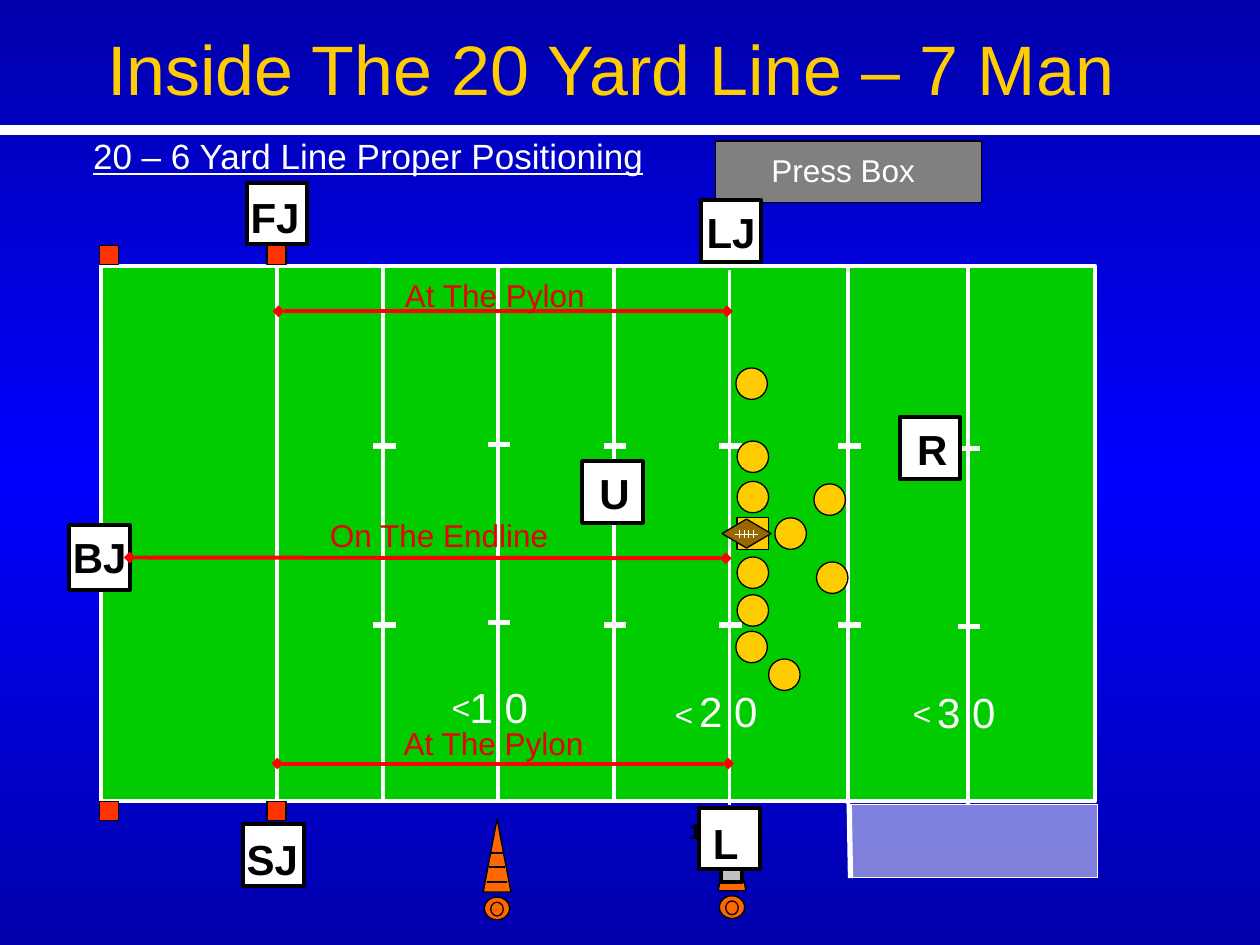
"""Builds the seven-man football officiating slide for plays inside the 20 yard line."""
import copy

import pptx
import pptx.dml.color
import pptx.enum.dml
import pptx.enum.shapes
import pptx.enum.text
import pptx.oxml
import pptx.oxml.ns
import pptx.util

Inches = pptx.util.Inches
SHAPE = pptx.enum.shapes.MSO_SHAPE
ALIGN = pptx.enum.text.PP_ALIGN
ANCHOR = pptx.enum.text.MSO_ANCHOR

THEME = {
    "font": "Arial",
    "title": 40, "subtitle": 20, "big": 24, "label": 18, "small": 12,
    "edge": "0000AA", "middle": "0000FF", "white": "FFFFFF", "black": "000000",
    "grass": "00CC00", "gold": "FFCC00", "grey": "808080", "silver": "C0C0C0",
    "pylon": "FF3300", "cone": "FF6600", "leather": "996600",
    "arrow": "FF0000", "note": "EA0000",
}

TITLE = "Inside The 20 Yard Line – 7 Man"
SUBTITLE = "20 – 6 Yard Line Proper Positioning"
FIELD = (0.8, 2.11, 7.89, 4.25)
GOAL_X = 2.2
PYLON = 0.15
PYLON_XS, PYLON_YS = (0.79, 2.12), (1.95, 6.36)
YARD_LINES = [
    (3.04, 2.11, (3.54, 4.96)), (3.95, 2.11, (3.53, 4.94)), (4.87, 2.11, (3.54, 4.96)),
    (5.79, 2.14, (3.54, 4.96)), (6.73, 2.13, (3.54, 4.96)), (7.68, 2.13, (3.56, 4.97)),
]
NUMERALS = [("1 0", 3.53, 5.36, 3.48, 5.41), ("2 0", 5.35, 5.39, 5.25, 5.47),
            ("3 0", 7.24, 5.4, 7.14, 5.46)]
CONES = [(5.81, 6.49, (6.99,)), (3.945, 6.5, (6.77, 6.88, 7))]
OFFICIALS = [
    ("FJ", 1.96, 1.45, 0.49, 1.89, 1.44), ("U", 4.62, 3.66, 0.49, 4.66, 3.63),
    ("SJ", 1.93, 6.54, 0.49, 1.86, 6.54), ("R", 7.14, 3.31, 0.49, 7.18, 3.28),
    ("L", 5.55, 6.41, 0.49, 5.56, 6.41), ("LJ", 5.56, 1.59, 0.49, 5.51, 1.56),
    ("BJ", 0.55, 4.17, 0.51, 0.48, 4.14),
]
PLAYER = 0.25
PLAYERS = [(5.85, 3.82), (5.85, 3.5), (5.85, 4.42), (5.85, 4.72), (6.15, 4.11), (6.1, 5.23),
           (5.84, 5.01), (5.84, 2.92), (6.46, 3.84), (6.48, 4.46)]
DISTANCES = [
    ("On The Endline", (2.51, 4.05, 1.94), (1.05, 5.76, 4.43), "BJ"),
    ("At The Pylon", (3.11, 2.14, 1.63), (2.21, 5.77, 2.47), None),
    ("At The Pylon", (3.1, 5.7, 1.63), (2.2, 5.78, 6.06), None),
]


def rgb(name):
    return pptx.dml.color.RGBColor.from_string(THEME[name])


def shape(shapes, kind, box, fill, line="black", width=0.75):
    sp = shapes.add_shape(kind, *map(Inches, box))
    sp.shadow.inherit = False
    if fill:
        sp.fill.solid()
        sp.fill.fore_color.rgb = rgb(fill)
    else:
        sp.fill.background()
    sp.line.color.rgb = rgb(line)
    sp.line.width = pptx.util.Pt(width)
    return sp


def line(shapes, x1, y1, x2, y2, color="white", width=2.25):
    cx = shapes.add_connector(pptx.enum.shapes.MSO_CONNECTOR.STRAIGHT,
                              *map(Inches, (x1, y1, x2, y2)))
    cx.line.color.rgb = rgb(color)
    cx.line.width = pptx.util.Pt(width)
    pptx.oxml.ns.qn("a:effectLst")
    cx._element.spPr.append(element("a:effectLst"))
    return cx


def element(tag, **attributes):
    el = pptx.oxml.parse_xml(f"<{tag} {pptx.oxml.ns.nsdecls('a')}/>")
    for name, value in attributes.items():
        el.set(name, value)
    return el


def write(sp, words, size, color, align=ALIGN.LEFT, wrap=False, **extra):
    tf = sp.text_frame
    for name, value in {"word_wrap": wrap, "vertical_anchor": ANCHOR.TOP}.items():
        setattr(tf, name, value)
    p = tf.paragraphs[0]
    p.alignment = align
    r = p.add_run()
    r.text = words
    font = {"name": THEME["font"], "size": pptx.util.Pt(THEME[size]), **extra}
    for name, value in font.items():
        setattr(r.font, name, value)
    r.font.color.rgb = rgb(color)


def text(shapes, box, *args, **kwargs):
    write(shapes.add_textbox(*map(Inches, box)), *args, **kwargs)


def background(s):
    fill = s.background.fill
    fill.gradient()
    fill.gradient_angle = 90
    stops = fill.gradient_stops
    last = stops[1]._gs
    last.addprevious(copy.deepcopy(last))
    for stop, (position, color) in zip(fill.gradient_stops,
                                       [(0, "edge"), (0.5, "middle"), (1, "edge")]):
        stop.position = position
        stop.color.rgb = rgb(color)


def field(shapes):
    left, top, width, height = FIELD
    bottom = top + height
    shape(shapes, SHAPE.RECTANGLE, FIELD, "grass", "white", 2.25)
    pylons = [shape(shapes, SHAPE.RECTANGLE, (x, y, PYLON, PYLON), "pylon")
              for x in PYLON_XS for y in PYLON_YS]
    goal = line(shapes, GOAL_X, top, GOAL_X, bottom)
    goal.begin_connect(pylons[2], 2)
    goal.end_connect(pylons[3], 0)
    for x, y, hashes in YARD_LINES:
        line(shapes, x, y, x, y + height)
        for hash_y in hashes:
            line(shapes, x - 0.08, hash_y, x + 0.1, hash_y, width=3)
    for words, x, y, arrow_x, arrow_y in NUMERALS:
        text(shapes, (x, y, 0.76, 0.5), words, "big", "white", ALIGN.RIGHT, True)
        text(shapes, (arrow_x, arrow_y, 0.35, 0.4), "<", "label", "white", ALIGN.RIGHT)
    line(shapes, 6.74, 6.38, 6.75, 6.97, width=3)
    area = shape(shapes, SHAPE.RECTANGLE, (6.75, 6.38, 1.96, 0.58), "white", "white", 0.25)
    area.line.dash_style = pptx.enum.dml.MSO_LINE.ROUND_DOT
    color = area._element.spPr.find(".//" + pptx.oxml.ns.qn("a:srgbClr"))
    color.append(element("a:alpha", val="50000"))


def cone(shapes, x, y, bands):
    g = shapes.add_group_shape().shapes
    shape(g, SHAPE.ISOSCELES_TRIANGLE, (x - 0.11, y, 0.22, 0.58), "cone")
    shape(g, SHAPE.OVAL, (x - 0.1, y + 0.62, 0.2, 0.18), "cone")
    shape(g, SHAPE.OVAL, (x - 0.05, y + 0.66, 0.1, 0.11), None)
    for band in bands:
        half = 0.19 * (band - y) / 0.58 * 0.5
        line(g, x - half, band, x + half, band, "black", 0.75)


def official(shapes, words, x, y, height, text_x, text_y):
    g = shapes.add_group_shape().shapes
    sp = shape(g, SHAPE.RECTANGLE, (x, y, 0.48, height), "white", width=2.25)
    text(g, (text_x, text_y + 0.03, 0.67, 0.5), words, "big", "black", bold=True)
    return sp


def football(shapes):
    g = shapes.add_group_shape().shapes
    shape(g, SHAPE.FLOWCHART_DECISION, (5.73, 4.12, 0.39, 0.23), "leather")
    line(g, 5.83, 4.24, 6.02, 4.24, width=0.75)
    for x in (5.87, 5.91, 5.94, 5.98):
        line(g, x, 4.21, x, 4.27, width=0.75)


def main():
    prs = pptx.Presentation()
    prs.slide_width, prs.slide_height = Inches(10), Inches(7.5)
    s = prs.slides.add_slide(prs.slide_layouts[5])
    shapes = s.shapes
    background(s)
    title = shapes.title
    for name, value in zip(("left", "top", "width", "height"), (0.75, 0.15, 8.95, 0.77)):
        setattr(title, name, Inches(value))
    write(title, TITLE, "title", "gold", wrap=True)
    shape(shapes, SHAPE.RECTANGLE, (5.68, 1.12, 2.11, 0.49), "grey")
    text(shapes, (6.02, 1.15, 1.34, 0.4), "Press Box", "label", "white", ALIGN.RIGHT)
    line(shapes, 0, 1.03, 10, 1.03, width=6)
    text(shapes, (0.64, 1.02, 4.59, 0.43), SUBTITLE, "subtitle", "white", underline=True)
    field(shapes)
    for item in CONES:
        cone(shapes, *item)
    shape(shapes, SHAPE.RECTANGLE, (5.72, 6.79, 0.17, 0.21), "silver", width=2.25)
    text(shapes, (5.37, 6.45, 0.29, 0.3), "1", "small", "black", bold=True)
    boxes = {item[0]: official(shapes, *item) for item in OFFICIALS}
    shape(shapes, SHAPE.RECTANGLE, (5.85, 4.11, PLAYER, PLAYER), "gold")
    for x, y in PLAYERS:
        shape(shapes, SHAPE.OVAL, (x, y, PLAYER, PLAYER), "gold")
    football(shapes)
    for words, (x, y, width), (x1, x2, arrow_y), start in DISTANCES:
        cx = line(shapes, x1, arrow_y, x2, arrow_y, "arrow")
        for tag in ("a:headEnd", "a:tailEnd"):
            cx.line._get_or_add_ln().append(element(tag, type="diamond"))
        if start:
            cx.begin_connect(boxes[start], 3)
        text(shapes, (x, y, width, 0.4), words, "label", "note", ALIGN.RIGHT)
    prs.save("out.pptx")


if __name__ == "__main__":
    main()
